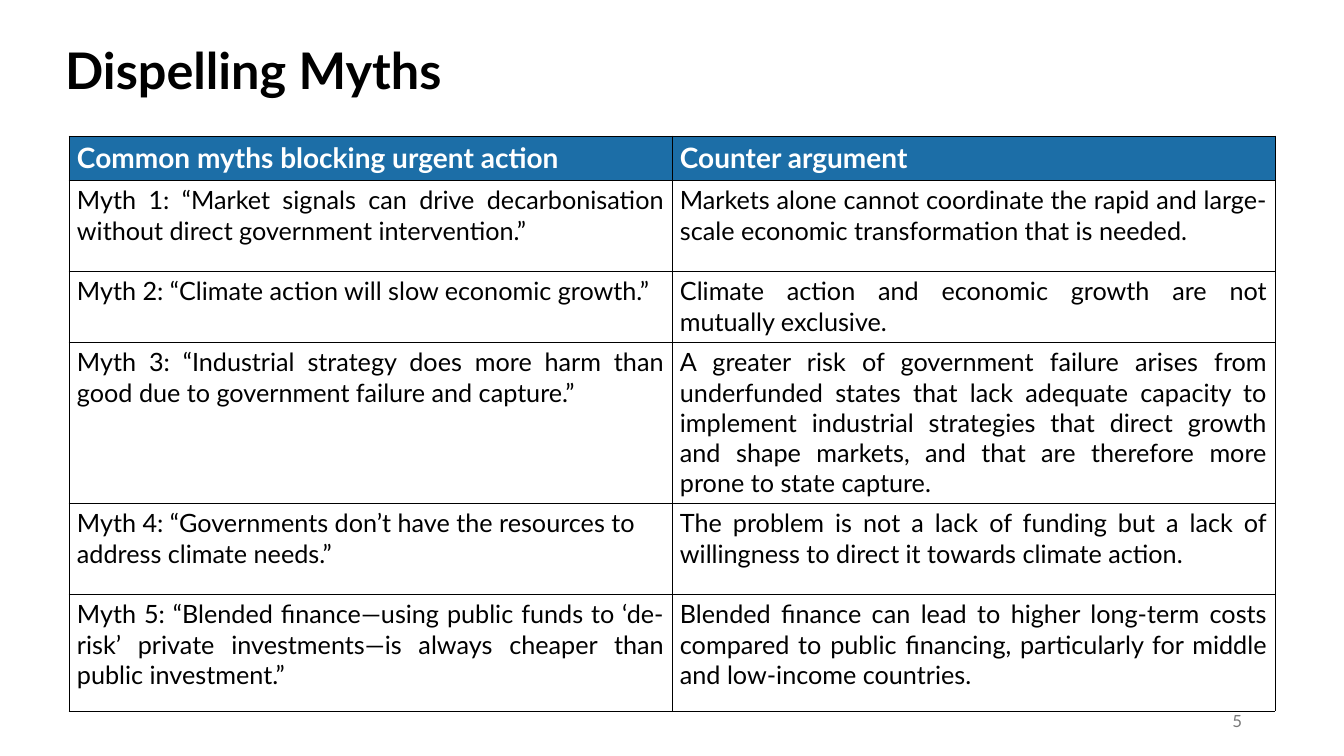
from dataclasses import dataclass

from lxml.etree import SubElement
from pptx import Presentation
from pptx.dml.color import RGBColor
from pptx.enum.text import MSO_ANCHOR, MSO_AUTO_SIZE, PP_ALIGN
from pptx.oxml.ns import qn
from pptx.util import Emu, Pt


@dataclass(frozen=True)
class Theme:
    font: str = "Lato"
    black: str = "000000"
    white: str = "FFFFFF"
    blue: str = "1C6EA7"
    grey: str = "797979"
    title: int = 36
    head: int = 20
    body: int = 18
    page: int = 12
    rule: float = 0.5


THEME = Theme()
SCALE = 914400 / 100.8  # EMU in one px

COLS = [603, 603]
ROWS = [44, 91, 71, 161, 91, 117]
HEADS = ["Common myths blocking urgent action", "Counter argument"]
MYTHS = [
    ("Myth 1: “Market signals can drive decarbonisation without direct "
     "government intervention.”",
     "Markets alone cannot coordinate the rapid and large-scale economic "
     "transformation that is needed."),
    ("Myth 2: “Climate action will slow economic growth.”",
     "Climate action and economic growth are not mutually exclusive."),
    ("Myth 3: “Industrial strategy does more harm than good due to "
     "government failure and capture.”",
     "A greater risk of government failure arises from underfunded states "
     "that lack adequate capacity to implement industrial strategies that "
     "direct growth and shape markets, and that are therefore more prone to "
     "state capture."),
    ("Myth 4: “Governments don’t have the resources to address climate "
     "needs.”",
     "The problem is not a lack of funding but a lack of willingness to "
     "direct it towards climate action."),
    ("Myth 5: “Blended finance—using public funds to ‘de-risk’ private "
     "investments—is always cheaper than public investment.”",
     "Blended finance can lead to higher long-term costs compared to public "
     "financing, particularly for middle and low-income countries."),
]
RAGGED = (4, 0)  # the one body cell that is set flush left


def px(n):
    return Emu(round(n * SCALE))


def write(frame, text, size, color, bold=False, align=PP_ALIGN.LEFT):
    para = frame.paragraphs[0]
    para.alignment = align
    run = para.add_run()
    run.text = text
    font = run.font
    font.name, font.size, font.bold = THEME.font, Pt(size), bold
    font.color.rgb = RGBColor.from_string(color)


def add_title(slide, text):
    title = slide.shapes.title
    title.left, title.top, title.width, title.height = map(px, (55, 34, 405, 72))
    frame = title.text_frame
    frame.word_wrap = False
    frame.auto_size = MSO_AUTO_SIZE.NONE
    frame.vertical_anchor = MSO_ANCHOR.TOP
    write(frame, text, THEME.title, THEME.black, bold=True)


def add_rules(cell):
    props = cell._tc.get_or_add_tcPr()
    for side in ("lnL", "lnR", "lnT", "lnB"):
        line = SubElement(props, qn(f"a:{side}"), w=str(Pt(THEME.rule)))
        fill = SubElement(line, qn("a:solidFill"))
        SubElement(fill, qn("a:srgbClr"), val=THEME.black)


def fill_cell(cell, text, is_head, align):
    cell.margin_left = cell.margin_right = px(8)
    cell.margin_top = cell.margin_bottom = px(5)
    add_rules(cell)
    if is_head:
        cell.fill.solid()
        cell.fill.fore_color.rgb = RGBColor.from_string(THEME.blue)
        write(cell.text_frame, text, THEME.head, THEME.white, True, align)
    else:
        cell.fill.background()
        write(cell.text_frame, text, THEME.body, THEME.black, False, align)


def add_grid(slide):
    rows = [HEADS, *MYTHS]
    table = slide.shapes.add_table(
        len(ROWS), len(COLS), px(69), px(136), px(sum(COLS)), px(sum(ROWS))
    ).table
    table.horz_banding = False
    for col, width in zip(table.columns, COLS):
        col.width = px(width)
    for r, (row, height) in enumerate(zip(table.rows, ROWS)):
        row.height = px(height)
        for c, text in enumerate(rows[r]):
            flush = r == 0 or (r, c) == RAGGED
            align = PP_ALIGN.LEFT if flush else PP_ALIGN.JUSTIFY
            fill_cell(table.cell(r, c), text, r == 0, align)


def add_page(slide, number):
    box = slide.shapes.add_textbox(px(950), px(701), px(302), px(40))
    frame = box.text_frame
    frame.word_wrap = True
    frame.vertical_anchor = MSO_ANCHOR.MIDDLE
    write(frame, number, THEME.page, THEME.grey, align=PP_ALIGN.RIGHT)


def main():
    deck = Presentation()
    deck.slide_width, deck.slide_height = px(1344), px(756)
    # Title Only layout
    slide = deck.slides.add_slide(deck.slide_layouts[5])
    add_title(slide, "Dispelling Myths")
    # Myths and answers
    add_grid(slide)
    # Page number
    add_page(slide, "5")
    deck.save("out.pptx")


if __name__ == "__main__":
    main()
